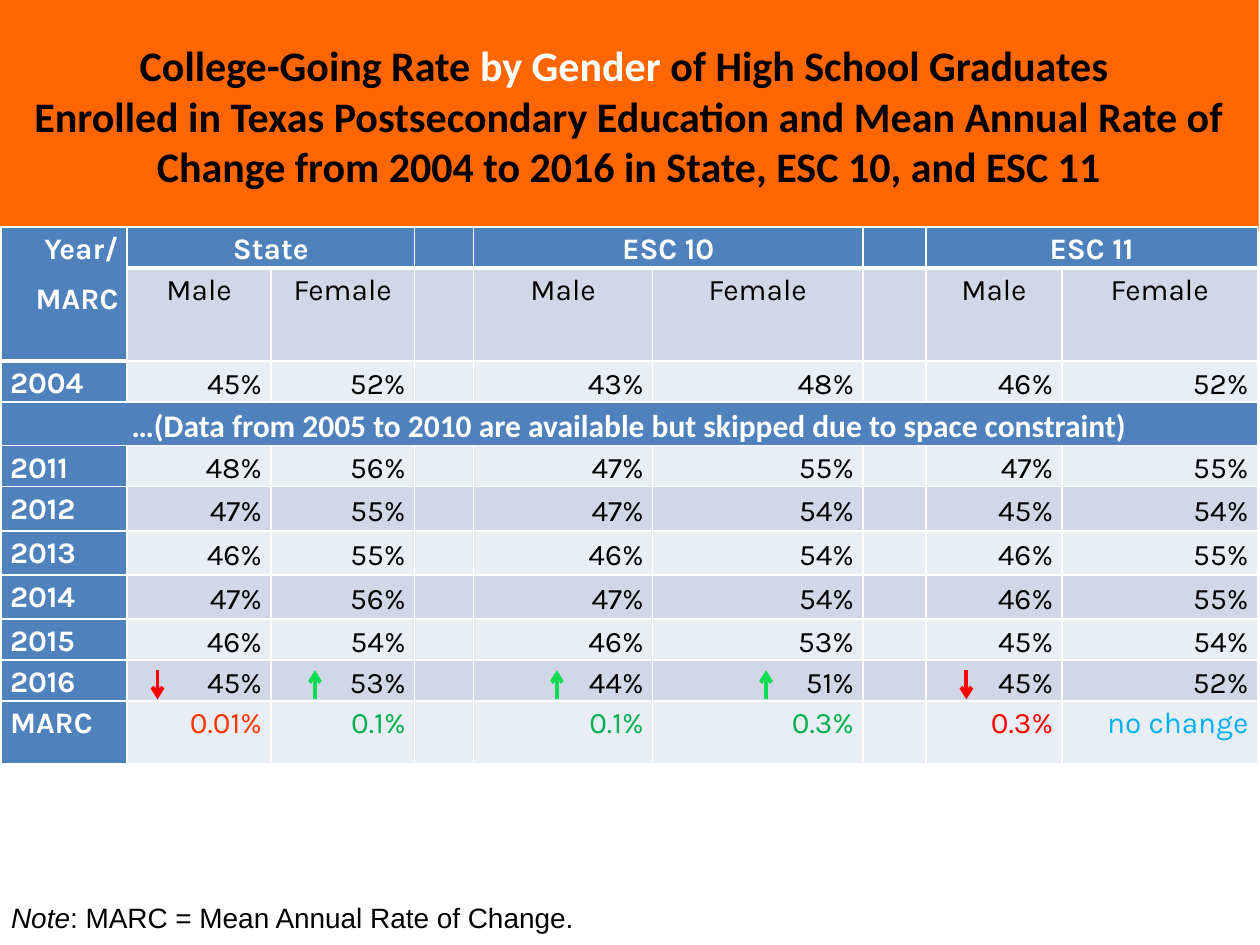
from pptx import Presentation
from pptx import util as u
from pptx.dml.color import RGBColor
from pptx.enum import shapes, text
from pptx.oxml.ns import qn
from lxml import etree

# Content
TITLE = [
    ("College-Going Rate ", "000000"),
    ("by Gender ", "FFFFFF"),
    ("of High School Graduates ", "000000"),
    "break",
    ("Enrolled in Texas Postsecondary Education and Mean Annual Rate of "
     "Change from 2004 to 2016 in State, ESC 10, and ESC 11", "000000"),
]
GROUPS = {1: "State", 4: "ESC 10", 7: "ESC 11"}
SKIP = "…(Data from 2005 to 2010 are available but skipped due to space constraint)"
RATES = {  # male and female of each group in turn
    2: ("2004", 45, 52, 43, 48, 46, 52),
    4: ("2011", 48, 56, 47, 55, 47, 55),
    5: ("2012", 47, 55, 47, 54, 45, 54),
    6: ("2013", 46, 55, 46, 54, 46, 55),
    7: ("2014", 47, 56, 47, 54, 46, 55),
    8: ("2015", 46, 54, 46, 53, 45, 54),
    9: ("2016", 45, 53, 44, 51, 45, 52),
}
MARC = [("0.01%", "FF3300"), ("0.1%", "00B050"), ("0.1%", "00B050"),
        ("0.3%", "00B050"), ("0.3%", "FF0000"), ("no change", "00B0F0")]
COLS = [1, 1.14, 1.14, 0.47, 1.42, 1.67, 0.5, 1.08, 1.55]
ROWS = [0.32, 0.74, 0.32, 0.32, 0.32, 0.35, 0.35, 0.35, 0.18, 0.18, 0.5]
DATA = [1, 2, 4, 5, 7, 8]  # columns that hold values
UP, DOWN = "0FDB53", "FF0000"
ARROWS = [(2.5, UP), (4.42, UP), (6.08, UP), (7.67, DOWN), (1.25, DOWN)]
BLUE, DARK, LIGHT = "4F81BD", "D0D8E8", "E9EDF4"
LEFT, MID, RIGHT = text.PP_ALIGN.LEFT, text.PP_ALIGN.CENTER, text.PP_ALIGN.RIGHT


def rgb(code):
    return RGBColor.from_string(code)


def put(para, words, size=17, face="Karla", color="000000", bold=False,
        slant=False, align=LEFT, lead=None, before=None, after=None):
    para.alignment = align
    if lead:
        para.line_spacing = lead
    if before is not None:
        para.space_before = u.Pt(before)
    if after is not None:
        para.space_after = u.Pt(after)
    run = para.add_run()
    run.text = words
    font = run.font
    font.size, font.name = u.Pt(size), face
    font.bold, font.italic = bold, slant
    font.color.rgb = rgb(color)


def place(shape, x, y, w, h):
    shape.left, shape.top = u.Inches(x), u.Inches(y)
    shape.width, shape.height = u.Inches(w), u.Inches(h)


def border(cell, base):
    props = cell._tc.get_or_add_tcPr()
    for side, width in (("L", 1), ("R", 1), ("T", 1), ("B", base)):
        line = etree.SubElement(props, qn("a:ln" + side), w=str(u.Pt(width)))
        fill = etree.SubElement(line, qn("a:solidFill"))
        etree.SubElement(fill, qn("a:srgbClr"), val="FFFFFF")


def shade(r, c):
    if r in (0, 3) or c == 0:
        return BLUE
    return DARK if r in (1, 5, 7, 9) else LIGHT


def fill_cell(r, c, words, **fmt):
    put(grid.cell(r, c).text_frame.paragraphs[0], words, lead=1.15, **fmt)


deck = Presentation()
deck.slide_width, deck.slide_height = u.Inches(10), u.Inches(7.5)
slide = deck.slides.add_slide(deck.slide_layouts[5])

# Title band
title = slide.shapes.title
place(title, -0.01, 0, 10, 1.83)
title.fill.solid()
title.fill.fore_color.rgb = rgb("FF6600")
frame = title.text_frame
frame.word_wrap = True
frame.auto_size = text.MSO_AUTO_SIZE.NONE
frame.vertical_anchor = text.MSO_ANCHOR.MIDDLE
for part in TITLE:
    para = frame.paragraphs[0]
    if part == "break":
        para.add_line_break()
    else:
        put(para, part[0], size=24, face="Calibri", color=part[1],
            bold=True, align=MID, before=0)

# Note
note = slide.shapes.add_textbox(0, 0, 0, 0)
place(note, -0.01, 7.1, 10, 0.37)
note.text_frame.word_wrap = True
for words, slant in (("Note", True), (": MARC = Mean Annual Rate of Change.", False)):
    put(note.text_frame.paragraphs[0], words, size=16, face="Arial", slant=slant)

# Table grid
holder = slide.shapes.add_table(len(ROWS), len(COLS), u.Inches(0.01), u.Inches(1.8),
                                u.Inches(sum(COLS)), u.Inches(sum(ROWS)))
grid = holder.table
grid.first_row = grid.horz_banding = False
for col, width in zip(grid.columns, COLS):
    col.width = u.Inches(width)
for row, height in zip(grid.rows, ROWS):
    row.height = u.Inches(height)
for r in range(len(ROWS)):
    for c in range(len(COLS)):
        cell = grid.cell(r, c)
        cell.margin_left = cell.margin_right = u.Inches(0.07)
        cell.margin_top = cell.margin_bottom = 0
        border(cell, 3 if r == 0 or (r, c) == (1, 0) else 1)
        cell.fill.solid()
        cell.fill.fore_color.rgb = rgb(shade(r, c))
        # keep blank cells from stretching their row
        cell.text_frame.paragraphs[0]._p.get_or_add_endParaRPr().set("sz", "1000")

# Header rows
grid.cell(0, 0).merge(grid.cell(1, 0))
head = dict(color="FFFFFF", bold=True)
fill_cell(0, 0, "Year/", align=RIGHT, before=6, **head)
put(grid.cell(0, 0).text_frame.add_paragraph(), "MARC", align=RIGHT,
    lead=1.15, before=6, after=6, **head)
for c, name in GROUPS.items():
    grid.cell(0, c).merge(grid.cell(0, c + 1))
    fill_cell(0, c, name, align=MID, before=6, **head)
    for k, sex in enumerate(("Male", "Female")):
        fill_cell(1, c + k, sex, align=MID, after=6)

# Rates by year
grid.cell(3, 0).merge(grid.cell(3, len(COLS) - 1))
fill_cell(3, 0, SKIP, size=18, face="Calibri", align=MID, **head)
for r, (year, *rates) in RATES.items():
    gap = 6 if r == 2 else 0
    fill_cell(r, 0, year, before=gap, **head)
    for c, rate in zip(DATA, rates):
        grid.cell(r, c).vertical_anchor = text.MSO_ANCHOR.MIDDLE
        fill_cell(r, c, f"{rate}%", align=RIGHT, before=gap)

# Mean annual rate of change
fill_cell(10, 0, "MARC", before=6, **head)
for c, (words, color) in zip(DATA, MARC):
    fill_cell(10, c, words, color=color, align=RIGHT, before=6)

# Trend arrows
for x, color in ARROWS:
    start, end = (5.55, 5.32) if color == UP else (5.32, 5.55)
    arrow = slide.shapes.add_connector(shapes.MSO_CONNECTOR.STRAIGHT, u.Inches(x),
                                       u.Inches(start), u.Inches(x), u.Inches(end))
    arrow.line.color.rgb = rgb(color)
    arrow.line.width = u.Pt(2.25)
    etree.SubElement(arrow.line._get_or_add_ln(), qn("a:tailEnd"), type="arrow")
    etree.SubElement(arrow._element.spPr, qn("a:effectLst"))

deck.save("out.pptx")
